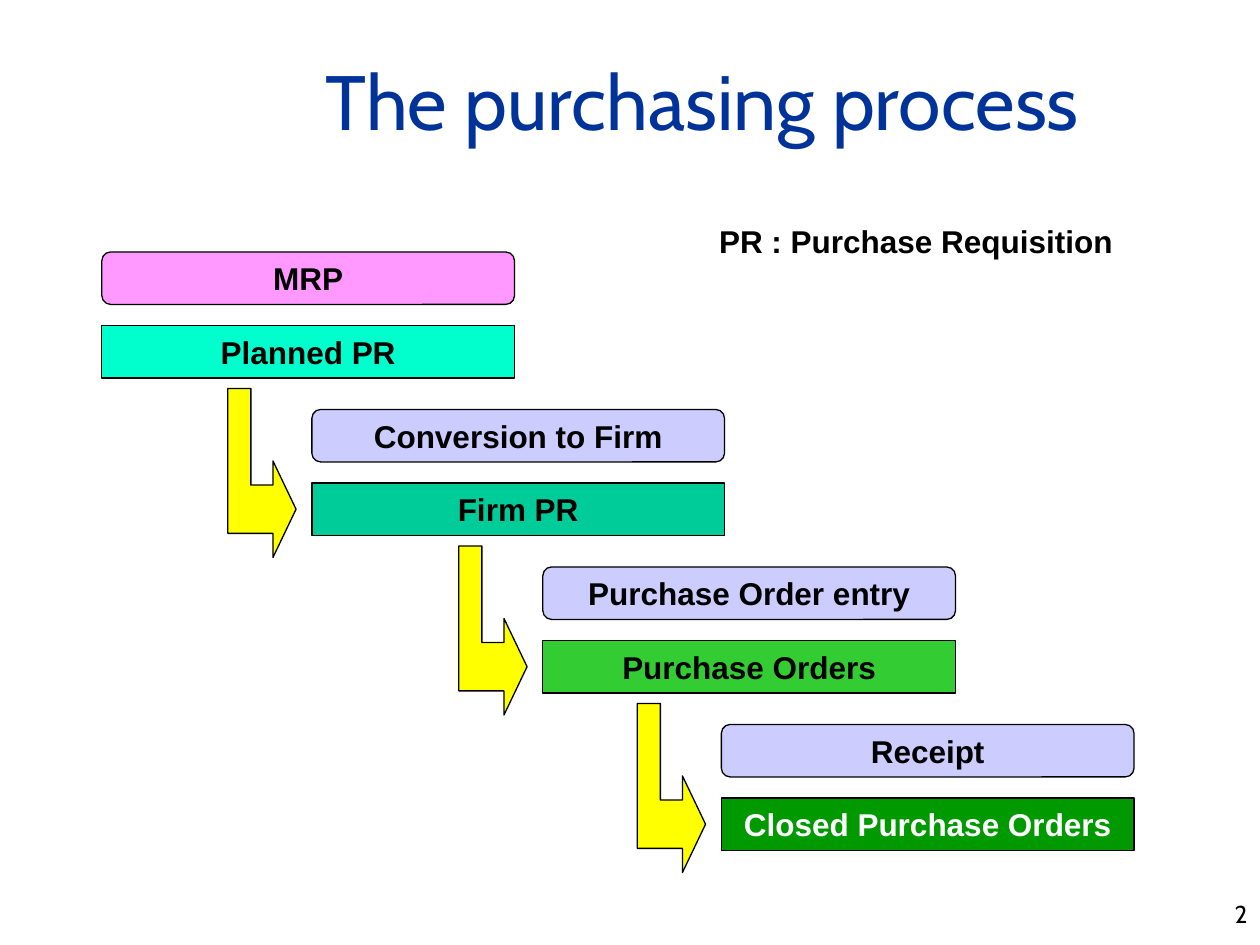
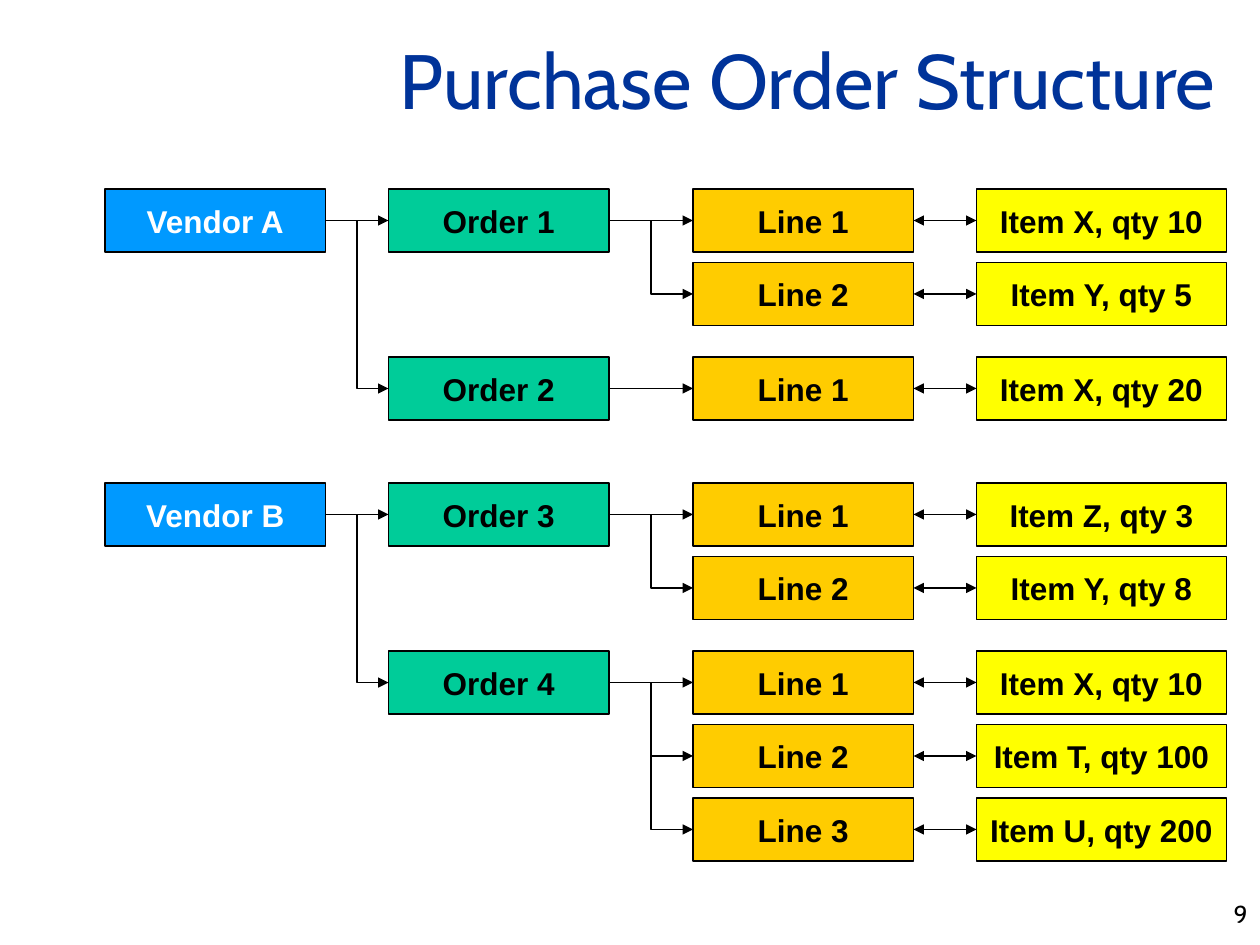
"""Build two slides on purchasing: the process steps and the purchase order structure."""
from lxml import etree
from pptx import Presentation
from pptx import util as u
from pptx.dml.color import RGBColor
from pptx.enum import shapes, text
from pptx.oxml import ns

PX = 7620
TITLE_FONT, BODY_FONT = "Cabin", "Arial"
BLACK = RGBColor(0x00, 0x00, 0x00)
WHITE = RGBColor(0xFF, 0xFF, 0xFF)
NAVY = RGBColor(0x00, 0x33, 0x99)
PINK = RGBColor(0xFF, 0x99, 0xFF)
LAVENDER = RGBColor(0xCC, 0xCC, 0xFF)
AQUA = RGBColor(0x00, 0xFF, 0xCC)
TEAL = RGBColor(0x00, 0xCC, 0x99)
GREEN = RGBColor(0x33, 0xCC, 0x33)
DARK_GREEN = RGBColor(0x00, 0x99, 0x00)
BLUE = RGBColor(0x00, 0x99, 0xFF)
ORANGE = RGBColor(0xFF, 0xCC, 0x00)
YELLOW = RGBColor(0xFF, 0xFF, 0x00)
RECT = shapes.MSO_SHAPE.RECTANGLE
ROUNDED = shapes.MSO_SHAPE.ROUNDED_RECTANGLE
STRAIGHT, ELBOW = shapes.MSO_CONNECTOR.STRAIGHT, shapes.MSO_CONNECTOR.ELBOW
LEFT, CENTER, RIGHT = text.PP_ALIGN.LEFT, text.PP_ALIGN.CENTER, text.PP_ALIGN.RIGHT


def write(shape, words, align, size=18, font=BODY_FONT, color=BLACK, bold=True):
    """Write one formatted run into a shape."""
    para = shape.text_frame.paragraphs[0]
    para.alignment = align
    span = para.add_run()
    span.text = words
    span.font.name, span.font.size, span.font.bold = font, u.Pt(size), bold
    span.font.color.rgb = color


def add_box(page, kind, left, top, width, height, fill, words, color=BLACK):
    """Add an outlined box with a centred label."""
    box = page.shapes.add_shape(kind, left * PX, top * PX, width * PX, height * PX)
    box.shadow.inherit = False
    box.fill.solid()
    box.fill.fore_color.rgb = fill
    box.line.color.rgb = BLACK
    box.line.width = u.Pt(0.75)
    box.text_frame.word_wrap = False
    box.text_frame.vertical_anchor = text.MSO_ANCHOR.MIDDLE
    write(box, words, CENTER, color=color)
    return box


deck = Presentation()
deck.slide_width, deck.slide_height = 1200 * PX, 900 * PX

pages = []
for heading, number, left, top, width in [
    ("The purchasing process", "2", 20, 20, 1020),
    ("Purchase Order Structure", "9", 0, 0, 1170),
]:
    page = deck.slides.add_slide(deck.slide_layouts[5])
    title = page.shapes.title
    title.left, title.top, title.width, title.height = left * PX, top * PX, width * PX, 150 * PX
    title.text_frame.auto_size = text.MSO_AUTO_SIZE.NONE
    title.text_frame.vertical_anchor = text.MSO_ANCHOR.MIDDLE
    write(title, heading, RIGHT, 44, TITLE_FONT, NAVY, False)
    footer = page.shapes.add_textbox(950 * PX, 850 * PX, 250 * PX, 30 * PX)
    footer.text_frame.word_wrap = True
    write(footer, number, RIGHT, 14, TITLE_FONT, BLACK, False)
    pages.append(page)
process, structure = pages

STAGES = [
    (97, "MRP", PINK, "Planned PR", AQUA, BLACK),
    (297, "Conversion to Firm", LAVENDER, "Firm PR", TEAL, BLACK),
    (517, "Purchase Order entry", LAVENDER, "Purchase Orders", GREEN, BLACK),
    (687, "Receipt", LAVENDER, "Closed Purchase Orders", DARK_GREEN, WHITE),
]
ARROW_FROM_TIP = [(-22, -46), (-22, -23), (-43, -23), (-43, -115), (-65, -115),
                  (-65, 23), (-22, 23), (-22, 46)]
for step, (left, action, action_fill, result, result_fill, result_color) in enumerate(STAGES):
    top = 240 + 150 * step
    add_box(process, ROUNDED, left, top, 393, 50, action_fill, action)
    add_box(process, RECT, left, top + 70, 393, 50, result_fill, result, result_color)
    if step:
        tip_x, tip_y = left - 15, top + 95
        outline = process.shapes.build_freeform(tip_x, tip_y, scale=PX)
        outline.add_line_segments([(tip_x + x, tip_y + y) for x, y in ARROW_FROM_TIP])
        arrow = outline.convert_to_shape()
        arrow.shadow.inherit = False
        arrow.fill.solid()
        arrow.fill.fore_color.rgb = YELLOW
        arrow.line.color.rgb = BLACK
        arrow.line.width = u.Pt(0.75)

legend = process.shapes.add_textbox(673 * PX, 206 * PX, 400 * PX, 48 * PX)
legend.text_frame.word_wrap = False
write(legend, "PR : Purchase Requisition", LEFT)

VENDORS = [
    ("Vendor A", [("Order 1", ["Item X, qty 10", "Item Y, qty 5"]),
                  ("Order 2", ["Item X, qty 20"])]),
    ("Vendor B", [("Order 3", ["Item Z, qty 3", "Item Y, qty 8"]),
                  ("Order 4", ["Item X, qty 10", "Item T, qty 100", "Item U, qty 200"])]),
]
links = []
top = 180
for vendor, orders in VENDORS:
    vendor_box = add_box(structure, RECT, 100, top, 210, 60, BLUE, vendor, WHITE)
    for order_index, (order, items) in enumerate(orders):
        order_box = add_box(structure, RECT, 370, top, 210, 60, TEAL, order)
        links.append((vendor_box, order_box, ELBOW if order_index else STRAIGHT, ["tailEnd"]))
        for line_index, item in enumerate(items):
            line_box = add_box(structure, RECT, 660, top, 210, 60, ORANGE, f"Line {line_index + 1}")
            item_box = add_box(structure, RECT, 930, top, 238, 60, YELLOW, item)
            links.append((order_box, line_box, ELBOW if line_index else STRAIGHT, ["tailEnd"]))
            links.append((line_box, item_box, STRAIGHT, ["headEnd", "tailEnd"]))
            top += 70
        top += 20
    top += 30

for source, target, kind, arrowheads in links:
    link = structure.shapes.add_connector(kind, 0, 0, 0, 0)
    link.begin_connect(source, 3)
    link.end_connect(target, 1)
    link.line.color.rgb = BLACK
    link.line.width = u.Pt(0.75)
    properties = link.element.spPr
    for end in arrowheads:
        etree.SubElement(properties.find(ns.qn("a:ln")), ns.qn(f"a:{end}"), type="triangle")
    etree.SubElement(properties, ns.qn("a:effectLst"))

deck.save("out.pptx")
